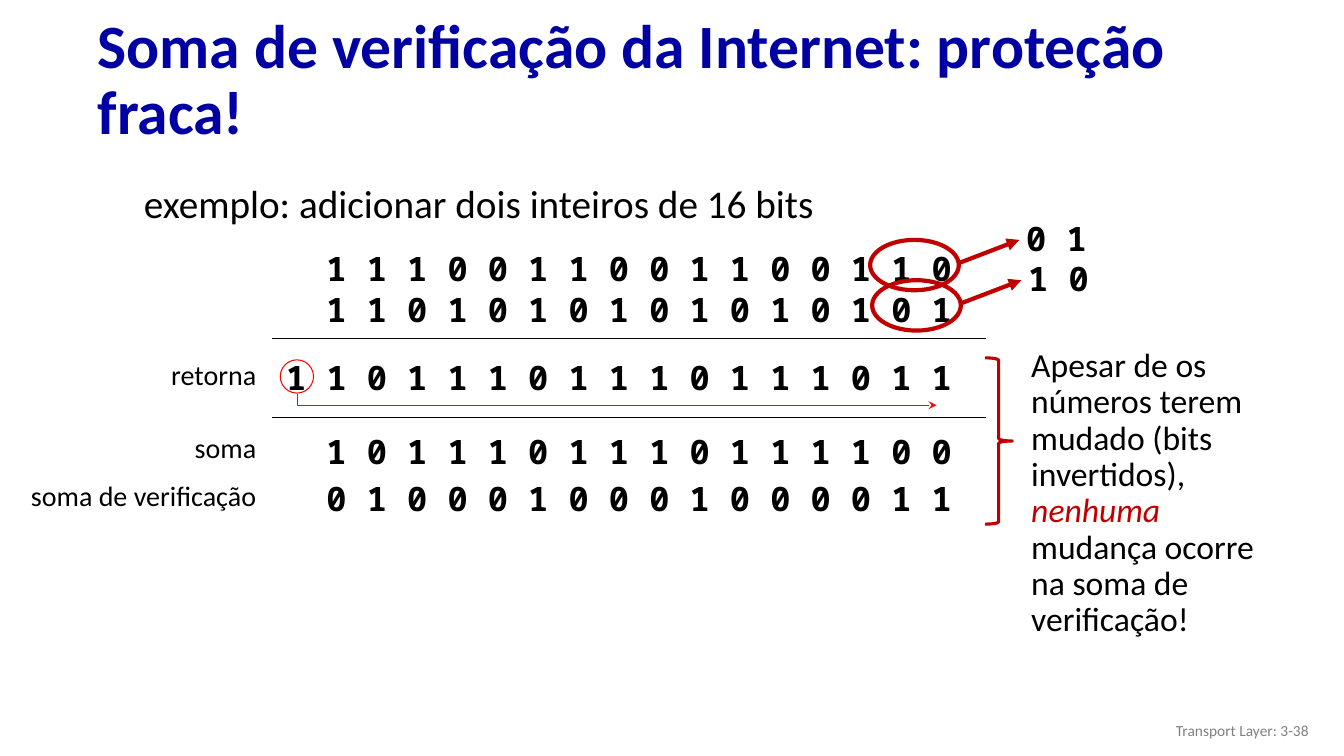
import pptx
import pptx.dml.color
import pptx.enum.shapes
import pptx.enum.text
import pptx.oxml
import pptx.oxml.ns
import pptx.util

RGBColor = pptx.dml.color.RGBColor
SHAPE = pptx.enum.shapes.MSO_SHAPE
ALIGN = pptx.enum.text.PP_ALIGN
ANCHOR = pptx.enum.text.MSO_ANCHOR

BLACK = RGBColor(0x00, 0x00, 0x00)
NAVY = RGBColor(0x00, 0x00, 0xA3)
RED = RGBColor(0xFF, 0x00, 0x00)
DARK_RED = RGBColor(0xC0, 0x00, 0x00)
GRAY = RGBColor(0x80, 0x80, 0x80)

# Content; lengths are px, 100 to the inch
SCALE = 9144
TITLE = "Soma de verificação da Internet: proteção fraca!"
EXAMPLE = "exemplo: adicionar dois inteiros de 16 bits"
FOOTER = "Transport Layer: 3-38"
NOTE = [
    ("Apesar de os números terem mudado (bits invertidos), ", {}),
    ("nenhuma", {"italic": True, "color": DARK_RED}),
    (" mudança ocorre na soma de verificação!", {}),
]
BIT_ROWS = [  # top, bits
    (241, "1110011001100110"),
    (282, "1101010101010101"),
    (349, "11011101110111011"),
    (423, "1011101110111100"),
    (469, "0100010001000011"),
]
LABELS = [(350, "retorna"), (422, "soma"), (470, "soma de verificação")]
SWAPS = [(863, 238, "01"), (865, 278, "10")]  # ellipse left, top, new bits
RULES = [336, 414]
RULE_LEFT, RULE_RIGHT = 270, 978
BITS_RIGHT = 959
BIT_STEP = 40
LABEL_LEFT, LABEL_RIGHT = 10, 264

presentation = pptx.Presentation()
presentation.slide_width = 1333 * SCALE
presentation.slide_height = 750 * SCALE
slide = presentation.slides.add_slide(presentation.slide_layouts[6])


def emu(*lengths):
    return [length * SCALE for length in lengths]


def add_text(box, runs, size, align=ALIGN.LEFT, anchor=ANCHOR.TOP, spacing=1.0,
             before=0, **formats):
    frame = slide.shapes.add_textbox(*emu(*box)).text_frame
    frame.word_wrap = True
    frame.vertical_anchor = anchor
    paragraph = frame.paragraphs[0]
    paragraph.alignment = align
    paragraph.line_spacing = spacing
    paragraph.space_before = pptx.util.Pt(before)
    for text, changes in runs:
        run = paragraph.add_run()
        run.text = text
        values = {"name": "Calibri", "size": pptx.util.Pt(size), "color": BLACK,
                  **formats, **changes}
        run.font.color.rgb = values.pop("color")
        for name, value in values.items():
            setattr(run.font, name, value)


def add_bits(left, top, bits):
    box = (left, top, BIT_STEP * len(bits) + 10, 50)
    add_text(box, [(" ".join(bits), {})], 24, name="Noto Sans Mono", bold=True)


def style_line(shape, color, width, arrow=None):
    shape.line.color.rgb = color
    shape.line.width = pptx.util.Pt(width)
    if arrow:
        line = shape.element.spPr.find(pptx.oxml.ns.qn("a:ln"))
        tail = pptx.oxml.parse_xml(
            f'<a:tailEnd {pptx.oxml.ns.nsdecls("a")} type="{arrow}"/>')
        line.append(tail)


def add_outline(kind, box, color, width):
    shape = slide.shapes.add_shape(kind, *emu(*box))
    shape.shadow.inherit = False
    shape.fill.background()
    style_line(shape, color, width)


def add_line(ends, color, width, arrow=None):
    line = slide.shapes.add_connector(
        pptx.enum.shapes.MSO_CONNECTOR.STRAIGHT, *emu(*ends))
    style_line(line, color, width, arrow)
    effects = f'<a:effectLst {pptx.oxml.ns.nsdecls("a")}/>'
    line.element.spPr.append(pptx.oxml.parse_xml(effects))


# Title and example line
add_text((87, 32, 1214, 98), [(TITLE, {})], 44, anchor=ANCHOR.MIDDLE,
         spacing=0.9, color=NAVY, bold=True)
add_text((133, 159, 850, 100), [(EXAMPLE, {})], 28, spacing=1.3, before=10)

# Sum: rules, labels and bits that line up on the right
for y in RULES:
    add_line((RULE_LEFT, y, RULE_RIGHT, y), BLACK, 1)
for top, label in LABELS:
    add_text((LABEL_LEFT, top, LABEL_RIGHT - LABEL_LEFT, 44), [(label, {})], 20,
             align=ALIGN.RIGHT)
for top, bits in BIT_ROWS:
    add_bits(BITS_RIGHT - BIT_STEP * len(bits) - 5, top, bits)

# Carry bit wrapped around to the last column
add_outline(SHAPE.OVAL, (278, 357, 33, 33), RED, 0.75)
builder = slide.shapes.build_freeform(295, 391, scale=SCALE)
builder.add_line_segments([(295, 402), (929, 402)], close=False)
carry_arrow = builder.convert_to_shape()
carry_arrow.shadow.inherit = False
carry_arrow.fill.background()
style_line(carry_arrow, RED, 0.75, "stealth")

# Swapped bits
for left, top, bits in SWAPS:
    add_outline(SHAPE.OVAL, (left, top, 88, 50), DARK_RED, 3)
    add_line((left + 88, top + 23, left + 148, top), DARK_RED, 3, "triangle")
    add_bits(left + 145, top - 27, bits)

# Conclusion
add_outline(SHAPE.RIGHT_BRACE, (977, 355, 27, 165), DARK_RED, 2.25)
add_text((1013, 341, 263, 301), NOTE, 24, spacing=0.9)

# Footer
add_text((1008, 705, 300, 40), [(FOOTER, {})], 11, align=ALIGN.RIGHT,
         anchor=ANCHOR.MIDDLE, color=GRAY)

presentation.save("out.pptx")
